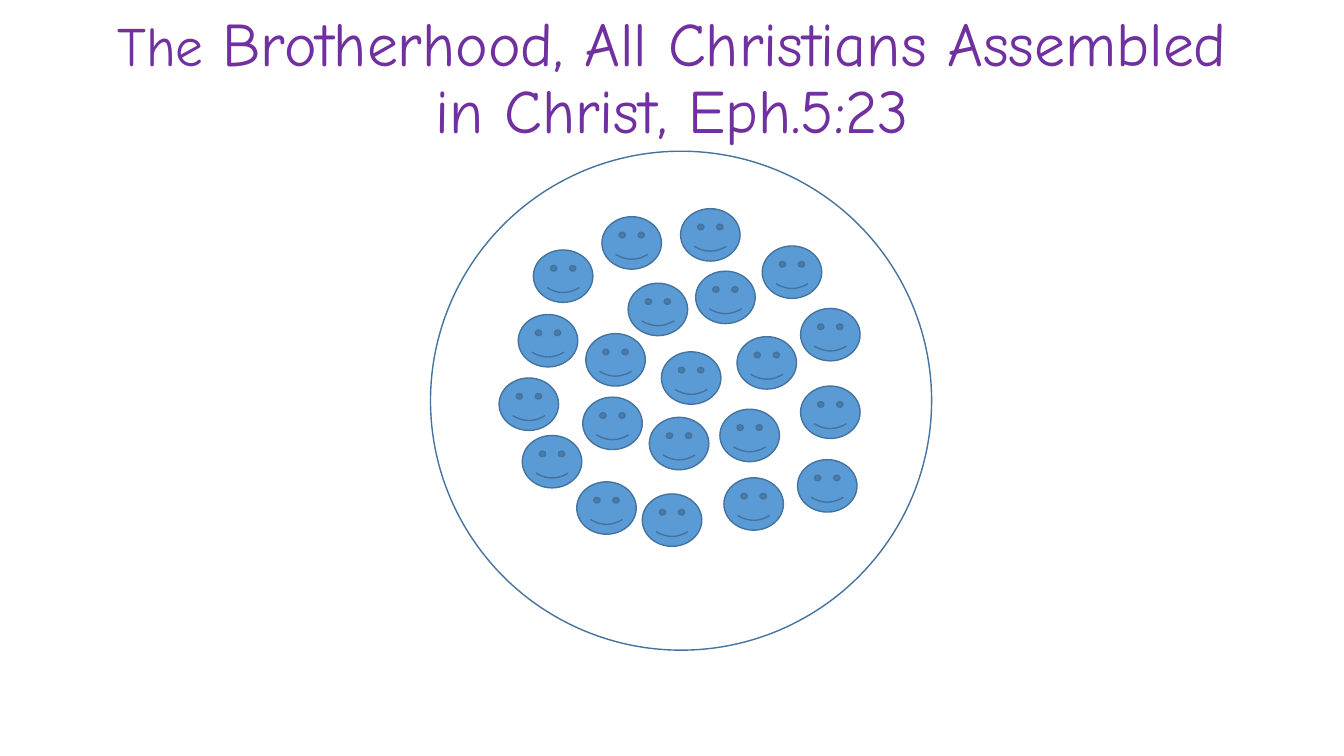
from typing import NamedTuple

from pptx import Presentation
from pptx.dml.color import RGBColor
from pptx.enum import shapes, text
from pptx.util import Inches, Pt

PURPLE, BLUE, OUTLINE, WHITE = "7030A0", "5B9BD5", "43739E", "FFFFFF"
FACE_WIDTH, FACE_HEIGHT = 0.59, 0.52


class Spot(NamedTuple):
    left: float
    top: float


BELIEVERS = [Spot(*corner) for corner in (
    (5.81, 3.31), (6.56, 3.49), (5.29, 2.48), (5.97, 2.15), (7.14, 4.06),
    (7.18, 4.74), (7.94, 3.83), (7.94, 3.06), (6.44, 4.14), (5.78, 3.94),
    (7.31, 3.34), (6.37, 4.9), (5.72, 4.78), (5.18, 4.32), (4.95, 3.75),
    (7.91, 4.56), (6.9, 2.69), (5.14, 3.12), (6.23, 2.81), (7.56, 2.44),
    (6.75, 2.07),
)]


def paint(color_format, color: str) -> None:
    color_format.rgb = RGBColor.from_string(color)


def add_outlined(slide, preset, spot: Spot, width: float, height: float,
                 fill: str) -> None:
    figure = slide.shapes.add_shape(preset, Inches(spot.left), Inches(spot.top),
                                    Inches(width), Inches(height))
    figure.shadow.inherit = False
    figure.fill.solid()
    paint(figure.fill.fore_color, fill)
    paint(figure.line.color, OUTLINE)
    figure.line.width = Pt(1)


def write_title(slide) -> None:
    title = slide.shapes.title
    title.left, title.top = Inches(0.92), Inches(0.45)
    title.width, title.height = Inches(11.5), Inches(0.69)
    frame = title.text_frame
    frame.word_wrap = True
    frame.auto_size = text.MSO_AUTO_SIZE.NONE
    frame.vertical_anchor = text.MSO_ANCHOR.MIDDLE
    heading = frame.paragraphs[0]
    heading.alignment = text.PP_ALIGN.CENTER
    heading.line_spacing = 0.9
    heading.font.name = "Comic Neue"
    paint(heading.font.color, PURPLE)
    for words, size in (
        ("The ", 39.6),
        ("Brotherhood, All Christians Assembled in Christ, Eph.5:23", 44.1),
    ):
        run = heading.add_run()
        run.text = words
        run.font.size = Pt(size)


def main() -> None:
    deck = Presentation()
    deck.slide_width, deck.slide_height = Inches(13.33), Inches(7.5)
    slide = deck.slides.add_slide(deck.slide_layouts.get_by_name("Title Only"))
    write_title(slide)
    add_outlined(slide, shapes.MSO_SHAPE.OVAL, Spot(4.27, 1.5), 4.97, 4.95, WHITE)
    for spot in BELIEVERS:
        add_outlined(slide, shapes.MSO_SHAPE.SMILEY_FACE, spot,
                     FACE_WIDTH, FACE_HEIGHT, BLUE)
    deck.save("out.pptx")


if __name__ == "__main__":
    main()
